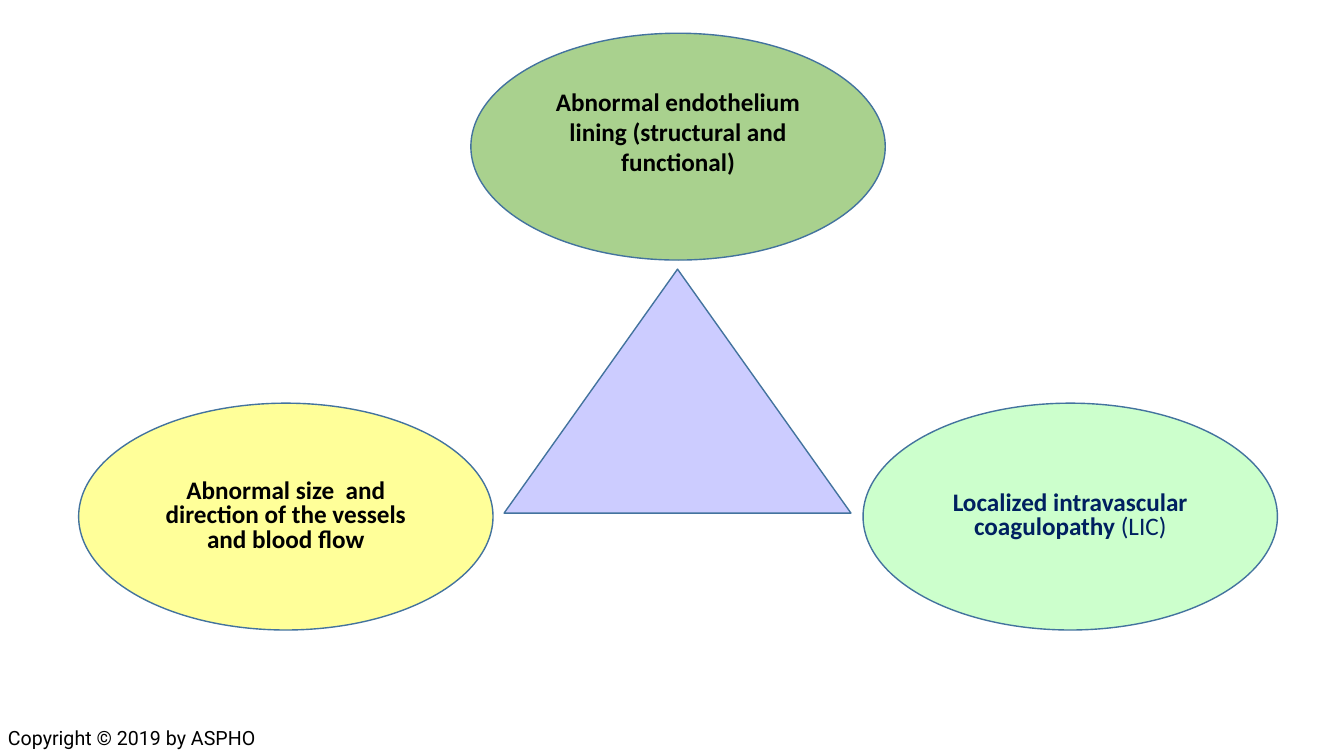
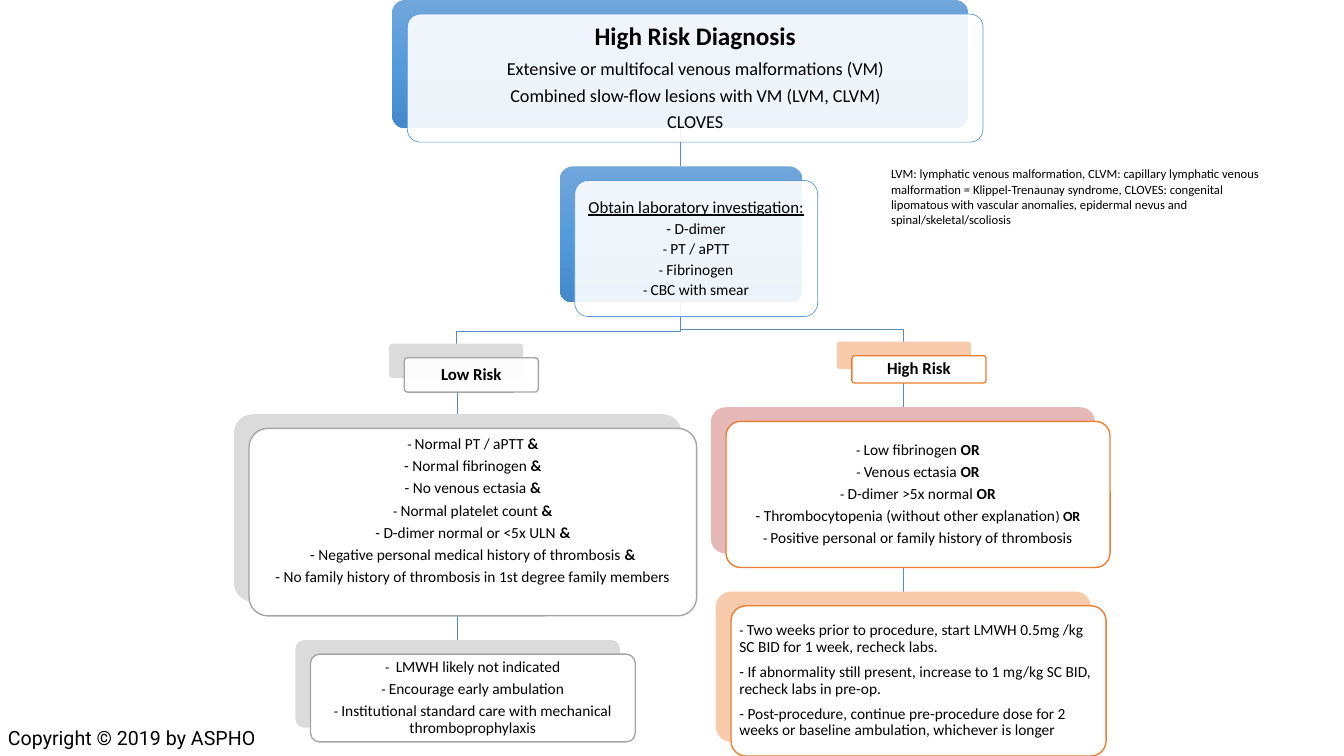
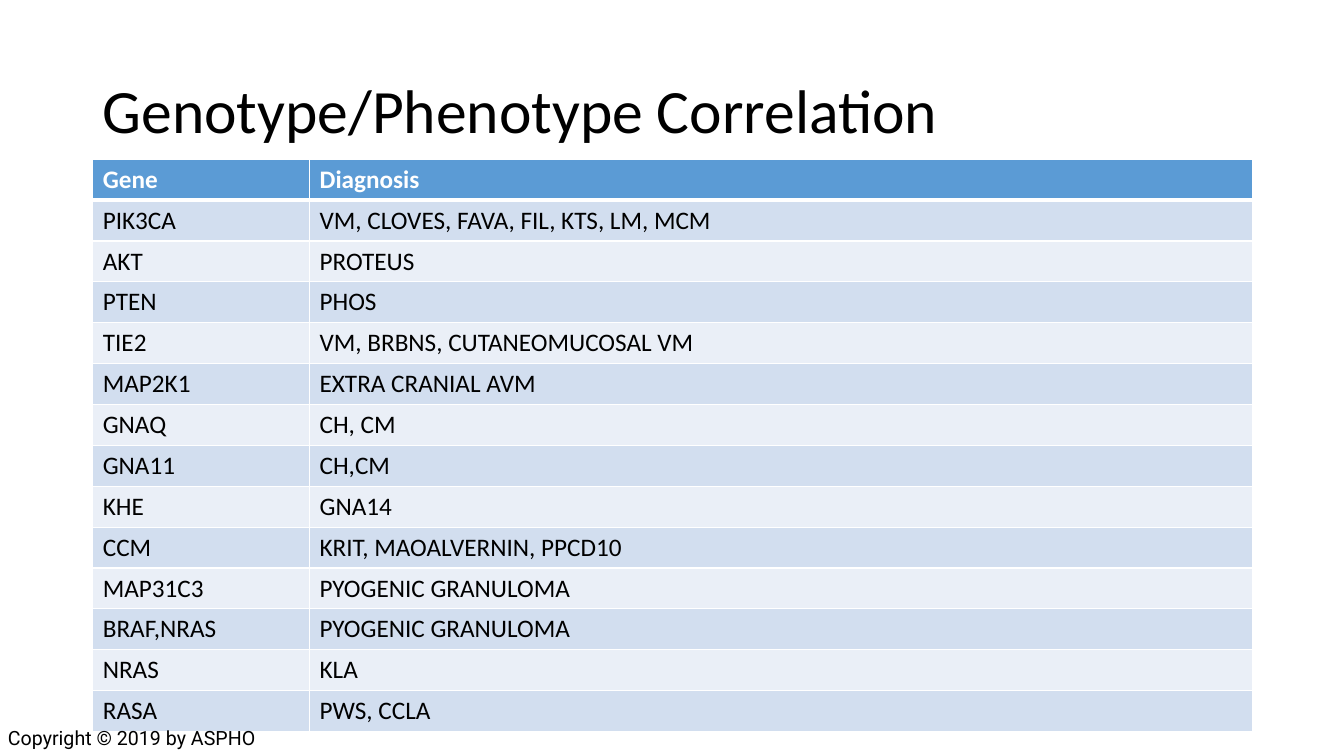
from copy import deepcopy
from lxml.etree import SubElement
from pptx import Presentation
from pptx.dml.color import RGBColor as RGB
from pptx.enum.shapes import MSO_CONNECTOR as CONN, MSO_SHAPE as SHAPE
from pptx.enum.text import MSO_ANCHOR as ANCHOR, PP_ALIGN as ALIGN
from pptx.oxml.ns import qn
from pptx.util import Pt

PX = 9144  # 100 px to the inch
C = {
    "black": "000000", "white": "FFFFFF", "navy": "002060", "outline": "43739E",
    "lilac": "CCCCFF", "green": "A9D18E", "yellow": "FFFF99", "mint": "CCFFCC",
    "blue": "5B9BD5", "line": "538DC1", "grey": "A5A5A5", "pale_grey": "DBDBDB",
    "orange": "ED7D31", "peach": "F8CBAD", "rose": "E6B9B8",
    "band_dark": "D2DEEF", "band_light": "EAEFF7",
}
BLUE_GRADIENT = ["71A6DB", "559BDB", "448ACA"]


def write(tf, paras, size=11, color="black", bold=False, font="Calibri", align=ALIGN.CENTER,
          spacing=0.9, after=0, anchor=ANCHOR.MIDDLE, insets=(10, 5, 10, 5)):
    """Fill a frame; * toggles bold, ~ toggles 10 pt, a (text, dict) pair overrides a paragraph."""
    tf.word_wrap = True
    tf.vertical_anchor = anchor
    tf.margin_left, tf.margin_top, tf.margin_right, tf.margin_bottom = [v * PX for v in insets]
    for n, para in enumerate(paras):
        text, own = (para, {}) if isinstance(para, str) else para
        p = tf.paragraphs[0] if n == 0 else tf.add_paragraph()
        p.alignment = align
        p.line_spacing = own.get("spacing", spacing)
        p.space_after = Pt(own.get("after", after))
        strong = own.get("bold", bold)
        for i, part in enumerate(text.split("~")):
            for j, bit in enumerate(part.split("*")):
                strong = strong != (j > 0)
                if not bit:
                    continue
                r = p.add_run()
                r.text = bit
                r.font.name = font
                r.font.size = Pt(10 if i % 2 else own.get("size", size))
                r.font.bold = strong
                r.font.underline = own.get("underline", False)
                r.font.color.rgb = RGB.from_string(C[color])


def add_box(s, kind, x, y, w, h, fill, line=None, width=1.0):
    sp = s.shapes.add_shape(kind, x * PX, y * PX, w * PX, h * PX)
    sp.shadow.inherit = False
    if kind == SHAPE.ROUNDED_RECTANGLE:
        sp.adjustments[0] = 0.1
    if fill == "gradient":
        sp.fill.gradient()
        sp.fill.gradient_angle = 270
        stops = sp._element.spPr.find(".//" + qn("a:gsLst"))
        stops.insert(1, deepcopy(stops[0]))
        for n, stop in enumerate(sp.fill.gradient_stops):
            stop.position = n / 2
            stop.color.rgb = RGB.from_string(BLUE_GRADIENT[n])
    else:
        sp.fill.solid()
        sp.fill.fore_color.rgb = RGB.from_string(C[fill])
    if line:
        sp.line.color.rgb = RGB.from_string(C[line])
        sp.line.width = Pt(width)
    else:
        sp.line.fill.background()
    return sp


prs = Presentation()
prs.slide_width, prs.slide_height = 1333 * PX, 750 * PX
triad, flow, genes = [prs.slides.add_slide(prs.slide_layouts[6]) for _ in range(3)]

# Slide 1: triangle with three causes
add_box(triad, SHAPE.ISOSCELES_TRIANGLE, 500, 267, 344, 242, "lilac", "outline")
causes = [
    (467, 33, "green", "black", 1.0, 35, "Abnormal endothelium lining (structural and functional)"),
    (78, 400, "yellow", "black", 0.8, 5, "Abnormal size  and direction of the vessels and blood flow"),
    (856, 400, "mint", "navy", 0.8, 5, "Localized intravascular coagulopathy* (LIC)"),
]
for x, y, fill, color, spacing, bottom, text in causes:
    sp = add_box(triad, SHAPE.OVAL, x, y, 411, 225, fill, "outline")
    write(sp.text_frame, [text], size=18, bold=True, color=color, spacing=spacing,
          insets=(10, 5, 10, bottom))

# Slide 2: lines between the cards
links = [
    [(675, 127), (675, 165)],
    [(675, 300), (675, 329), (453, 329), (453, 341)],
    [(675, 300), (675, 327), (896, 327), (896, 339)],
    [(454, 375), (454, 411)],
    [(454, 597), (454, 635)],
    [(896, 365), (896, 404)],
    [(896, 549), (896, 587)],
]
for pts in links:
    if len(pts) == 2:
        ln = flow.shapes.add_connector(CONN.STRAIGHT, *[v * PX for pt in pts for v in pt])
        SubElement(ln._element.spPr, qn("a:effectLst"))
    else:
        path_builder = flow.shapes.build_freeform(*pts[0], scale=PX)
        path_builder.add_line_segments(pts[1:], close=False)
        ln = path_builder.convert_to_shape()
        ln.fill.background()
        ln.shadow.inherit = False
    ln.line.color.rgb = RGB.from_string(C["line"])
    ln.line.width = Pt(0.5)

# Slide 2: cards, each a coloured back plate under a white front plate
cards = [
    (389, 0, 571, 127, "gradient", "blue", dict(size=13, after=4.55, insets=[7] * 4), [
        ("High Risk Diagnosis", dict(size=18, bold=True, after=6.3)),
        "Extensive or multifocal venous malformations (VM)",
        "Combined slow-flow lesions with VM (LVM, CLVM)",
        "CLOVES"]),
    (555, 165, 241, 135, "gradient", "blue", dict(spacing=0.8, insets=[5] * 4), [
        ("Obtain laboratory investigation:", dict(size=12, underline=True, spacing=0.9, after=4.2)),
        "- D-dimer",
        "~- ~PT / aPTT",
        "~- ~Fibrinogen",
        "~- ~CBC with smear"]),
    (386, 341, 133, 34, "pale_grey", "grey", dict(size=12, bold=True, insets=[5] * 4), ["Low Risk"]),
    (232, 411, 444, 186, "pale_grey", "grey", dict(insets=(4, 4, 4, 26)), [
        "~- ~Normal PT / aPTT *&",
        "- Normal fibrinogen* &",
        "- No venous ectasia *&",
        "~- ~Normal platelet count *&",
        "- D-dimer normal or <5x ULN *&",
        "- Negative personal medical history of thrombosis *&",
        "- No family history of thrombosis in 1st degree family members"]),
    (293, 635, 322, 87, "pale_grey", "grey", {}, [
        "~-  ~LMWH likely not indicated",
        "~- ~Encourage early ambulation",
        "~- ~Institutional standard care with mechanical thromboprophylaxis"]),
    (830, 339, 133, 27, "peach", "orange", dict(size=12, bold=True, insets=[5] * 4), ["High Risk"]),
    (705, 404, 381, 145, "rose", "orange", {}, [
        "~- ~Low fibrinogen *OR",
        "~- ~Venous ectasia *OR",
        "~- ~D-dimer >5x normal *OR",
        "- Thrombocytopenia (without other explanation~) *OR",
        "~- ~Positive personal or family history of thrombosis"]),
    (710, 587, 372, 149, "peach", "orange", dict(align=ALIGN.LEFT, after=6), [
        "~- ~Two weeks prior to procedure, start LMWH 0.5mg /kg SC BID for 1 week, recheck labs.",
        "- If abnormality still present, increase to 1 mg/kg SC BID, recheck labs in pre-op.",
        "- Post-procedure, continue pre-procedure dose for 2 weeks or baseline ambulation, "
        "whichever is longer"]),
]
for x, y, w, h, back, edge, fmt, paras in cards:
    see_through = back == "gradient"
    add_box(flow, SHAPE.ROUNDED_RECTANGLE, x, y, w, h, back)
    sp = add_box(flow, SHAPE.ROUNDED_RECTANGLE, x + 15, y + 14, w, h, "white", edge,
                 0.5 if see_through else 1)
    if see_through or paras == ["Low Risk"]:
        SubElement(sp._element.spPr.find(qn("a:solidFill"))[0], qn("a:alpha"), val="90000")
    write(sp.text_frame, paras, **{"after": 3.85, "insets": [4] * 4, **fmt})

# Slide 2: abbreviations
tb = flow.shapes.add_textbox(874 * PX, 160 * PX, 393 * PX, 71 * PX)
write(tb.text_frame, [
    "LVM: lymphatic venous malformation, CLVM: capillary lymphatic venous malformation = "
    "Klippel-Trenaunay syndrome, CLOVES: congenital lipomatous with vascular anomalies, "
    "epidermal nevus and spinal/skeletal/scoliosis"],
    size=9, align=ALIGN.LEFT, spacing=1.0, anchor=ANCHOR.TOP)

# Slide 3: title and gene table
tb = genes.shapes.add_textbox(92 * PX, 40 * PX, 1150 * PX, 145 * PX)
write(tb.text_frame, ["Genotype/Phenotype Correlation"], size=44, align=ALIGN.LEFT)
rows = [
    ("Gene", "Diagnosis"),
    ("PIK3CA", "VM, CLOVES, FAVA, FIL, KTS, LM, MCM"),
    ("AKT", "PROTEUS"),
    ("PTEN", "PHOS"),
    ("TIE2", "VM, BRBNS, CUTANEOMUCOSAL VM"),
    ("MAP2K1", "EXTRA CRANIAL AVM"),
    ("GNAQ", "CH, CM"),
    ("GNA11", "CH,CM"),
    ("KHE", "GNA14"),
    ("CCM", "KRIT, MAOALVERNIN, PPCD10"),
    ("MAP31C3", "PYOGENIC GRANULOMA"),
    ("BRAF,NRAS", "PYOGENIC GRANULOMA"),
    ("NRAS", "KLA"),
    ("RASA", "PWS, CCLA"),
]
table = genes.shapes.add_table(len(rows), 2, 92 * PX, 158 * PX, 1150 * PX, 568 * PX).table
for col, w in zip(table.columns, (215, 935)):
    col.width = w * PX
for i, row in enumerate(rows):
    fill = "blue" if i == 0 else "band_dark" if i % 2 else "band_light"
    for j, text in enumerate(row):
        cell = table.cell(i, j)
        write(cell.text_frame, [text], size=18, bold=i == 0, color="black" if i else "white",
              align=ALIGN.LEFT, spacing=1.0, anchor=ANCHOR.TOP)
        tc_pr = cell._tc.get_or_add_tcPr()
        for side in "LRTB":
            thick = (i, side) in [(0, "B"), (1, "T")]
            ln = SubElement(tc_pr, qn("a:ln" + side), w=str(Pt(3 if thick else 1)))
            SubElement(SubElement(ln, qn("a:solidFill")), qn("a:srgbClr"), val=C["white"])
        cell.fill.solid()
        cell.fill.fore_color.rgb = RGB.from_string(C[fill])

# Footer on every slide
for s in prs.slides:
    tb = s.shapes.add_textbox(-2 * PX, 715 * PX, 340 * PX, 34 * PX)
    write(tb.text_frame, ["Copyright © 2019 by ASPHO"], size=14, font="Roboto",
          align=ALIGN.LEFT, spacing=1.0, anchor=ANCHOR.TOP)

prs.save("out.pptx")
